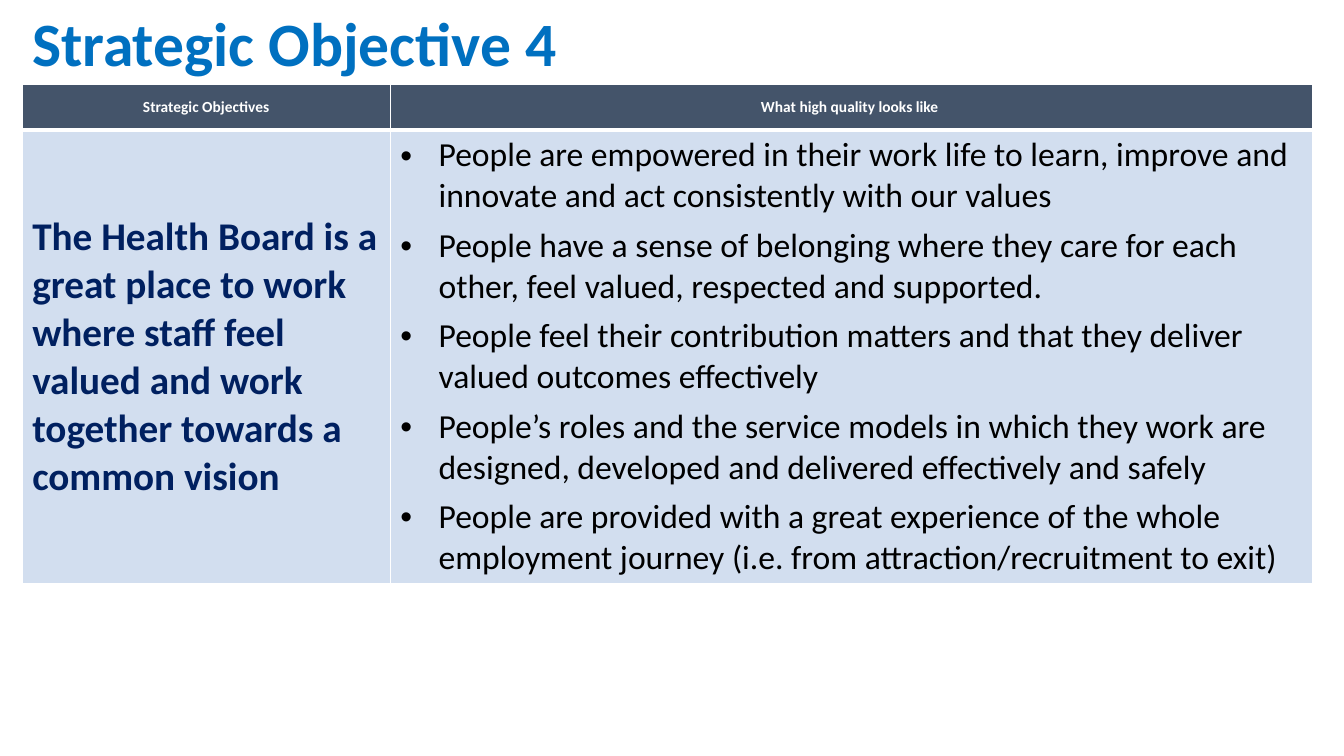
from lxml.etree import SubElement
from pptx import Presentation
from pptx.dml.color import RGBColor
from pptx.enum.text import MSO_ANCHOR as Anchor, MSO_AUTO_SIZE as AutoSize, PP_ALIGN as Align
from pptx.oxml.ns import qn
from pptx.util import Inches, Pt

FONT = "Calibri"
COLOURS = {
    "title": "0070C0",
    "header": "44546A",
    "body": "D2DEEF",
    "objective": "002060",
    "text": "000000",
    "white": "FFFFFF",
}
HEADINGS = ["Strategic Objectives", "What high quality looks like "]
OBJECTIVE = ("The Health Board is a great place to work where staff feel valued "
             "and work together towards a common vision")
QUALITIES = [
    "People are empowered in their work life to learn, improve and innovate "
    "and act consistently with our values",
    "People have a sense of belonging where they care for each other, "
    "feel valued, respected and supported.",
    "People feel their contribution matters and that they deliver valued "
    "outcomes effectively",
    "People’s roles and the service models in which they work are designed, "
    "developed and delivered effectively and safely",
    "People are provided with a great experience of the whole employment "
    "journey (i.e. from attraction/recruitment to exit)",
]


def colour(name):
    return RGBColor.from_string(COLOURS[name])


def add_bullet(paragraph, indent=0.38):
    properties = paragraph._p.get_or_add_pPr()
    properties.set("marL", str(Inches(indent)))
    properties.set("indent", str(-Inches(indent)))
    SubElement(properties, qn("a:buFont"), typeface="Arial")
    SubElement(properties, qn("a:buChar"), char="•")


def write(frame, *texts, size, color, bold=True, align=Align.LEFT, after=0, bullet=False):
    for index, text in enumerate(texts):
        paragraph = frame.add_paragraph() if index else frame.paragraphs[0]
        paragraph.alignment = align
        paragraph.space_after = Pt(after)
        if bullet:
            add_bullet(paragraph)
        run = paragraph.add_run()
        run.text = text
        run.font.name = FONT
        run.font.size = Pt(size)
        run.font.bold = bold
        run.font.color.rgb = colour(color)


def format_cell(cell, fill, top=1, bottom=1, anchor=Anchor.MIDDLE):
    cell.vertical_anchor = anchor
    # Borders come before the fill in the cell properties
    properties = cell._tc.get_or_add_tcPr()
    for side, width in {"L": 1, "R": 1, "T": top, "B": bottom}.items():
        line = SubElement(properties, qn(f"a:ln{side}"), w=str(Pt(width)))
        SubElement(SubElement(line, qn("a:solidFill")), qn("a:srgbClr"), val=COLOURS["white"])
    cell.fill.solid()
    cell.fill.fore_color.rgb = colour(fill)


def add_title(slide, text, left, top, width, height):
    frame = slide.shapes.add_textbox(
        Inches(left), Inches(top), Inches(width), Inches(height)).text_frame
    frame.word_wrap = False
    frame.auto_size = AutoSize.SHAPE_TO_FIT_TEXT
    write(frame, text, size=44, color="title")


def add_objective_table(slide, left, top, width, height, first_column=3.65, header_height=0.45):
    table = slide.shapes.add_table(
        2, 2, Inches(left), Inches(top), Inches(width), Inches(height)).table
    for column, size in zip(table.columns, (first_column, width - first_column)):
        column.width = Inches(size)
    for row, size in zip(table.rows, (header_height, height - header_height)):
        row.height = Inches(size)

    # Header row
    for cell, heading in zip(table.rows[0].cells, HEADINGS):
        format_cell(cell, "header", bottom=3)
        write(cell.text_frame, heading, size=11, color="white", align=Align.CENTER)

    # Objective and its qualities
    objective, qualities = table.rows[1].cells
    format_cell(objective, "body", top=3)
    write(objective.text_frame, OBJECTIVE, size=28, color="objective")
    format_cell(qualities, "body", top=3, anchor=Anchor.TOP)
    write(qualities.text_frame, *QUALITIES, size=24, color="text",
          bold=False, after=6, bullet=True)


def main():
    presentation = Presentation()
    presentation.slide_width = Inches(13.33)
    presentation.slide_height = Inches(7.5)
    slide = presentation.slides.add_slide(presentation.slide_layouts[6])
    add_objective_table(slide, 0.22, 0.84, 12.8, 4.88)
    add_title(slide, "Strategic Objective 4", 0.22, 0, 5.46, 0.84)
    presentation.save("out.pptx")


if __name__ == "__main__":
    main()
